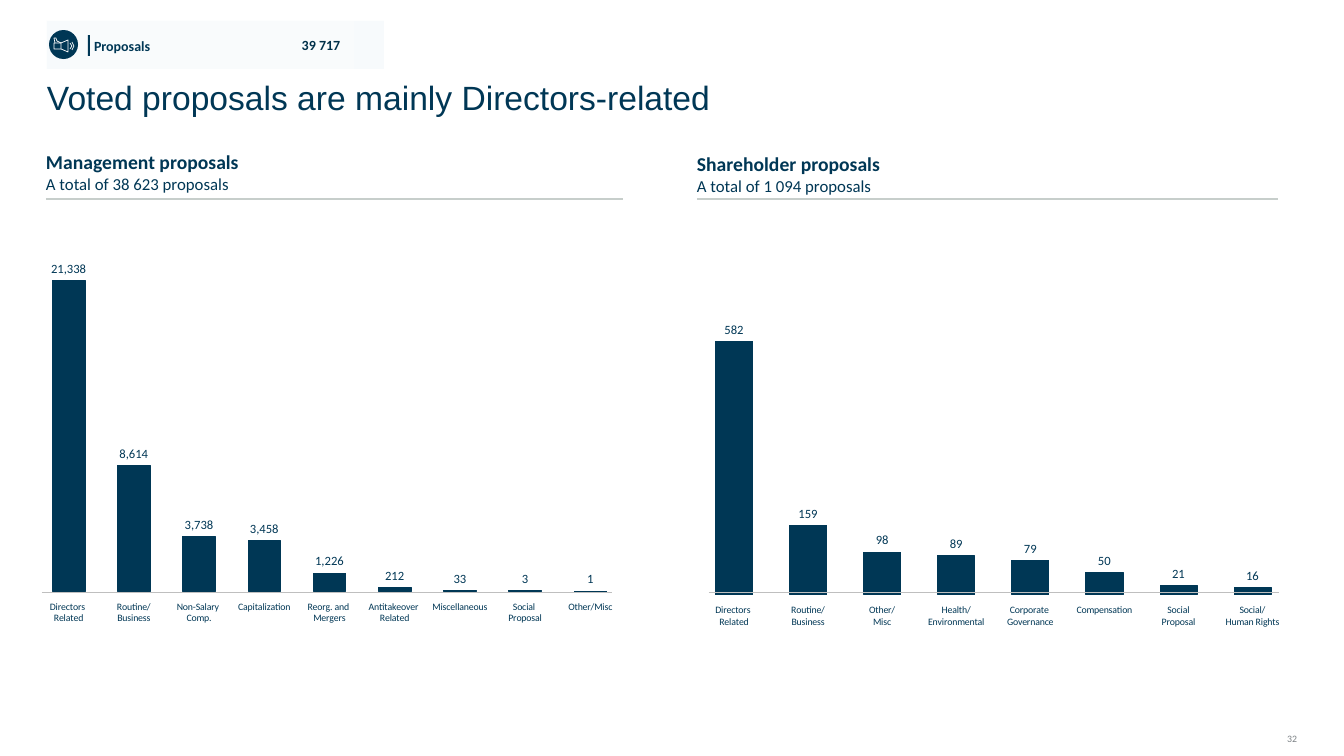
from lxml import etree
from pptx import Presentation
from pptx.chart.data import CategoryChartData
from pptx.dml.color import RGBColor
from pptx.enum.chart import XL_CHART_TYPE as Chart, XL_LABEL_POSITION as Place
from pptx.enum.chart import XL_TICK_MARK as Tick
from pptx.enum.shapes import MSO_CONNECTOR as Link, MSO_SHAPE as Shape
from pptx.enum.text import MSO_ANCHOR as Anchor, PP_ALIGN as Align
from pptx.oxml import parse_xml
from pptx.oxml.ns import qn
from pptx.util import Pt

PX = 914400 / 100.8
NAVY = RGBColor(0x00, 0x37, 0x55)
INK = RGBColor(0x00, 0x30, 0x4A)
GREY = RGBColor(0x7B, 0x81, 0x85)
RULE = RGBColor(0xC7, 0xCE, 0xCB)
BASE = RGBColor(0xBF, 0xBF, 0xBF)
PALE = RGBColor(0xF7, 0xFA, 0xFC)
WHITE = RGBColor(0xFF, 0xFF, 0xFF)

MANAGEMENT = [
    ("Directors \nRelated", 21338), ("Routine/\nBusiness", 8614),
    ("Non-Salary \nComp.", 3738), ("Capitalization", 3458),
    ("Reorg. and \nMergers", 1226), ("Antitakeover \nRelated", 212),
    ("Miscellaneous", 33), ("Social \nProposal", 3), ("Other/Misc", 1)]
SHAREHOLDER = [
    ("Directors \nRelated", 582), ("Routine/\nBusiness", 159),
    ("Other/\nMisc", 98), ("Health/\nEnvironmental", 89),
    ("Corporate \nGovernance", 79), ("Compensation", 50),
    ("Social\nProposal", 21), ("Social/\nHuman Rights", 16)]


def px(*nums):
    return [round(n * PX) for n in nums]


def style(font, size, color=NAVY, bold=False, name="Calibri"):
    font.name, font.size, font.bold = name, Pt(size), bold
    font.color.rgb = color


def fit(frame, anchor=Anchor.TOP):
    frame.margin_left = frame.margin_right = 0
    frame.margin_top = frame.margin_bottom = 0
    frame.word_wrap, frame.vertical_anchor = True, anchor


def add_text(slide, box, lines, align=Align.LEFT, anchor=Anchor.TOP):
    """Write lines of (text, size, color, bold), one paragraph each."""
    frame = slide.shapes.add_textbox(*px(*box)).text_frame
    fit(frame, anchor)
    for i, (text, size, color, bold) in enumerate(lines):
        para = frame.paragraphs[0] if i == 0 else frame.add_paragraph()
        para.text, para.alignment = text, align
        style(para.font, size, color, bold)


def add_fill(slide, kind, box, color):
    shape = slide.shapes.add_shape(kind, *px(*box))
    shape.shadow.inherit = False
    shape.fill.solid()
    shape.fill.fore_color.rgb = color
    shape.line.fill.background()
    return shape


def add_rule(slide, left, top, width, color, weight):
    line = slide.shapes.add_connector(
        Link.STRAIGHT, *px(left, top, left + width, top))
    line.line.color.rgb, line.line.width = color, Pt(weight)
    etree.SubElement(line._element.spPr, qn("a:effectLst"))


def add_horn(slide, left, top):
    """Outline a thumb, a loudspeaker and two sound waves."""
    body = [(0, 5), (7, 5), (14, 2), (14, 14), (7, 11), (0, 11)]
    thumb = [(1, 5), (0, 0), (2, 0), (3, 3), (7, 5), (7, 11)]
    waves = [[(x, 5 - d), (x + 2, 8), (x, 11 + d)] for x, d in ((16, 0), (18, 1))]
    for dots in (body, thumb, *waves):
        (x, y), *rest = [(left + a, top + b) for a, b in dots]
        pen = slide.shapes.build_freeform(x, y, scale=PX)
        pen.add_line_segments(rest, close=dots is body)
        shape = pen.convert_to_shape()
        shape.shadow.inherit = False
        shape.fill.background()
        shape.line.color.rgb, shape.line.width = WHITE, Pt(0.5)


def add_badge(slide, left, top):
    add_fill(slide, Shape.RECTANGLE, (left, top, 337, 48), PALE)
    veil = add_fill(slide, Shape.RECTANGLE, (left + 23, top, 284, 48), WHITE)
    tint = veil._element.spPr.find(qn("a:solidFill"))[0]
    etree.SubElement(tint, qn("a:alpha"), val="26000")
    add_fill(slide, Shape.OVAL, (left + 2, top + 9, 29, 29), NAVY)
    add_fill(slide, Shape.RECTANGLE, (left + 41, top + 14, 2, 21), NAVY)
    add_horn(slide, left + 7, top + 17)
    add_text(slide, (left + 47, top + 17, 158, 17),
             [("Proposals", 10, NAVY, True)])
    add_text(slide, (left + 229, top + 11, 90, 25),
             [("39 717", 10, INK, True)], Align.CENTER, Anchor.MIDDLE)


def set_plot(chart, plot):
    """Fix the inner plot area as fractions of the chart."""
    marks = "".join(f'<c:{k}Mode val="edge"/>' for k in "xy")
    marks += "".join(f'<c:{k} val="{v}"/>' for k, v in zip("xywh", plot))
    area = chart._chartSpace.chart.plotArea
    for old in area.findall(qn("c:layout")):
        area.remove(old)
    area.insert(0, parse_xml(
        '<c:layout xmlns:c="http://schemas.openxmlformats.org/drawingml/2006/'
        f'chart"><c:manualLayout><c:layoutTarget val="inner"/>{marks}'
        '</c:manualLayout></c:layout>'))


def add_bars(slide, box, rows, top, step, plot, form):
    data = CategoryChartData()
    data.categories = [name for name, _ in rows]
    data.add_series("Series 1", [count for _, count in rows])
    chart = slide.shapes.add_chart(
        Chart.COLUMN_CLUSTERED, *px(*box), data).chart
    chart.has_legend = chart.has_title = False
    style(chart.font, 10)
    set_plot(chart, plot)

    axis = chart.value_axis
    axis.minimum_scale, axis.maximum_scale, axis.major_unit = 0, top, step
    axis.has_major_gridlines = axis.visible = False
    axis = chart.category_axis
    axis.major_tick_mark = Tick.OUTSIDE
    axis.format.line.fill.background()
    style(axis.tick_labels.font, 7)

    bars = chart.plots[0]
    bars.gap_width, bars.vary_by_categories = 100, False
    look = bars.series[0].format
    look.fill.solid()
    look.fill.fore_color.rgb = look.line.color.rgb = NAVY
    look.line.width = Pt(0.5)
    bars.has_data_labels = True
    labels = bars.data_labels
    labels.show_value, labels.position = True, Place.OUTSIDE_END
    labels.number_format, labels.number_format_is_linked = form, False
    style(labels.font, 9)


def add_panel(slide, box, head, total, shift, chart, **bars):
    """Stack heading, rule, chart and baseline; chart is offset from the box."""
    left, top, width = box
    x, y, wide, high = chart
    add_text(slide, (left, top, width, 45),
             [(head, 14, NAVY, True), (total, 12, NAVY, False)])
    add_bars(slide, (left + x, top + y, wide, high), **bars)
    add_rule(slide, left + shift, 593, 570, BASE, 0.75)
    add_rule(slide, left, 199, width, RULE, 1)


def main():
    deck = Presentation()
    deck.slide_width, deck.slide_height = px(1344, 756)
    slide = deck.slides.add_slide(deck.slide_layouts[5])
    title = slide.shapes.title
    title.left, title.top, title.width, title.height = px(47, 81, 1250, 75)
    fit(title.text_frame)
    para = title.text_frame.paragraphs[0]
    para.text = "Voted proposals are mainly Directors-related"
    para.alignment, para.line_spacing = Align.LEFT, 0.9
    style(para.font, 24, name="Arial")

    add_badge(slide, 47, 21)
    add_panel(slide, (46, 150, 577), "Management proposals",
              "A total of 38 623 proposals", -4, (-10, 76, 599, 529),
              rows=MANAGEMENT, top=24000, step=1000,
              plot=(0, 0.03, 0.98, 0.66), form="#,##0")
    add_panel(slide, (697, 152, 581), "Shareholder proposals",
              "A total of 1 094 proposals", 12, (0, 87, 611, 501),
              rows=SHAREHOLDER, top=610, step=100,
              plot=(0, 0.18, 0.97, 0.53), form="General")
    add_text(slide, (1254, 733, 43, 12), [("32", 7, GREY, False)],
             Align.RIGHT, Anchor.BOTTOM)
    deck.save("out.pptx")


if __name__ == "__main__":
    main()
